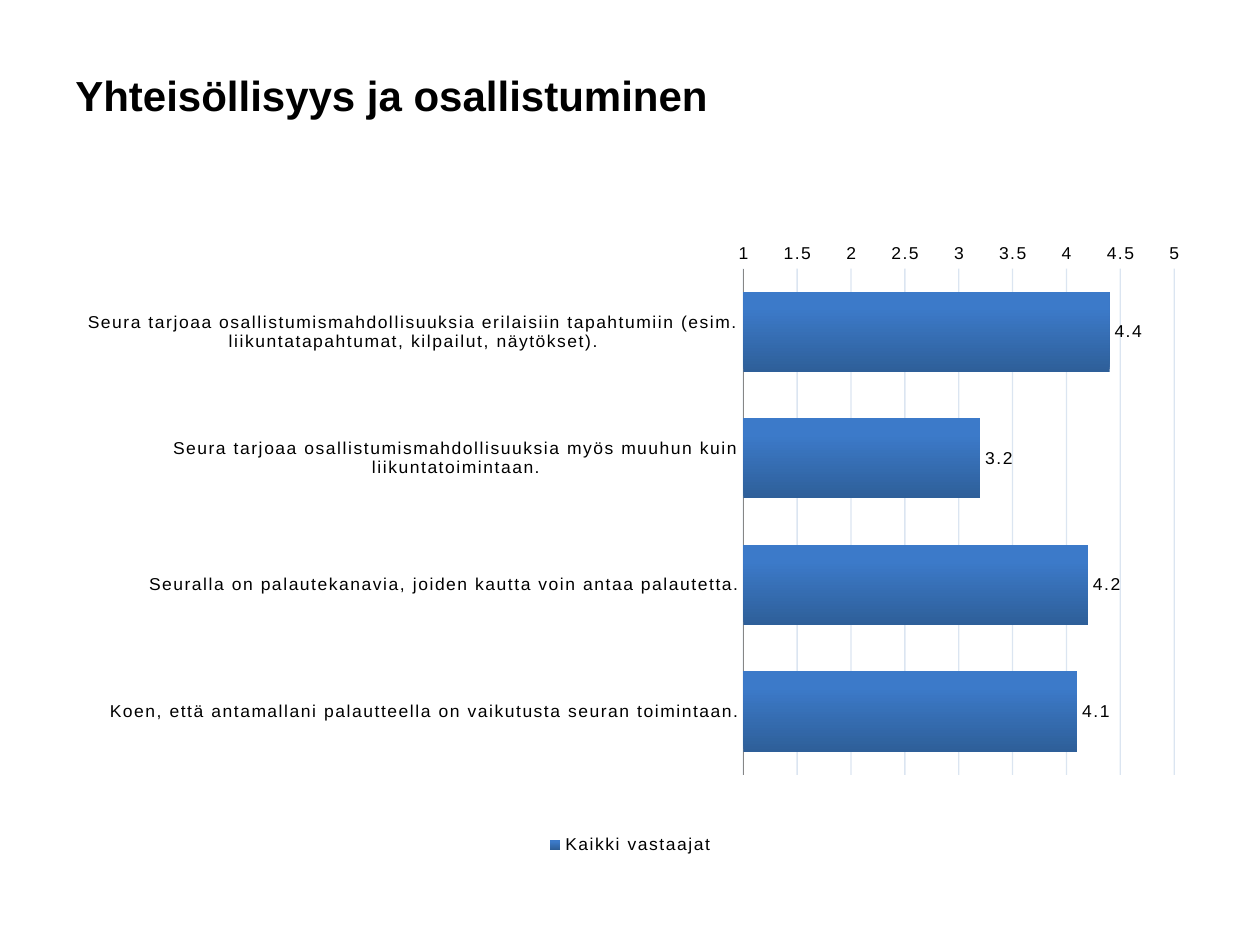
from lxml import etree
from pptx import Presentation
from pptx.chart.data import CategoryChartData
from pptx.dml.color import RGBColor
from pptx.enum.chart import (XL_AXIS_CROSSES, XL_CHART_TYPE, XL_LABEL_POSITION,
                             XL_LEGEND_POSITION, XL_TICK_MARK)
from pptx.enum.text import MSO_ANCHOR
from pptx.oxml import parse_xml
from pptx.oxml.ns import nsdecls, qn
from pptx.util import Inches, Pt

BAR_CHART = XL_CHART_TYPE.BAR_CLUSTERED
BOTTOM = XL_LEGEND_POSITION.BOTTOM
OUTSIDE_END = XL_LABEL_POSITION.OUTSIDE_END
NO_TICK = XL_TICK_MARK.NONE
AT_MAXIMUM = XL_AXIS_CROSSES.MAXIMUM
MIDDLE = MSO_ANCHOR.MIDDLE

BLACK = RGBColor(0x00, 0x00, 0x00)
GRID_BLUE = RGBColor(0x4F, 0x81, 0xBD)
BAR_DARK = RGBColor(0x2E, 0x5F, 0x99)
BAR_LIGHT = RGBColor(0x3C, 0x7A, 0xC9)
AXIS_GREY = RGBColor(0x86, 0x86, 0x86)
FONT = "Arial"

# Content
TITLE = "Yhteisöllisyys ja osallistuminen"
SERIES = "Kaikki vastaajat"
RATINGS = [
    ("Seura tarjoaa osallistumismahdollisuuksia erilaisiin tapahtumiin "
     "(esim. liikuntatapahtumat, kilpailut, näytökset).", 4.4),
    ("Seura tarjoaa osallistumismahdollisuuksia myös muuhun kuin "
     "liikuntatoimintaan.", 3.2),
    ("Seuralla on palautekanavia, joiden kautta voin antaa palautetta.", 4.2),
    ("Koen, että antamallani palautteella on vaikutusta seuran toimintaan.", 4.1),
]
# Plot area as fractions of the chart
PLOT_AREA = {"x": 0.6, "y": 0.02, "w": 0.38, "h": 0.84}


def style_font(font, size, bold=False, color=BLACK):
    font.name = FONT
    font.size = Pt(size)
    font.bold = bold
    font.color.rgb = color


def add_text(slide, text, left, top, width, height, size=18, bold=False,
             color=BLACK, anchor=MIDDLE):
    frame = slide.shapes.add_textbox(
        Inches(left), Inches(top), Inches(width), Inches(height)).text_frame
    frame.word_wrap = True
    frame.vertical_anchor = anchor
    run = frame.paragraphs[0].add_run()
    run.text = text
    style_font(run.font, size, bold, color)


def set_plot_layout(chart, fractions):
    plot_area = chart._chartSpace.chart.plotArea
    for old in plot_area.findall(qn("c:layout")):
        plot_area.remove(old)
    modes = '<c:xMode val="edge"/><c:yMode val="edge"/>'
    sizes = "".join(f'<c:{k} val="{v}"/>' for k, v in fractions.items())
    plot_area.insert(0, parse_xml(
        f'<c:layout {nsdecls("c")}><c:manualLayout><c:layoutTarget val="inner"/>'
        f'{modes}{sizes}</c:manualLayout></c:layout>'))


def add_rating_chart(slide):
    data = CategoryChartData(number_format="General")
    data.categories = [statement for statement, _ in RATINGS]
    data.add_series(SERIES, [rating for _, rating in RATINGS])
    chart = slide.shapes.add_chart(BAR_CHART, Inches(0.5), Inches(1.94),
                                   Inches(9), Inches(4.88), data).chart
    chart.has_title = False
    style_font(chart.font, 10)
    set_plot_layout(chart, PLOT_AREA)

    # Legend
    chart.has_legend = True
    chart.legend.position = BOTTOM
    chart.legend.include_in_layout = False
    style_font(chart.legend.font, 10)

    # Axes
    statements, scale = chart.category_axis, chart.value_axis
    for axis in (statements, scale):
        axis.major_tick_mark = axis.minor_tick_mark = NO_TICK
        style_font(axis.tick_labels.font, 10)
    statements.reverse_order = True
    statements.crosses = AT_MAXIMUM
    statements.format.line.color.rgb = AXIS_GREY
    statements.format.line.width = Pt(0.75)
    scale.minimum_scale, scale.maximum_scale, scale.major_unit = 1, 5, 0.5
    scale.format.line.fill.background()
    grid = scale.major_gridlines.format.line
    grid.color.rgb = GRID_BLUE
    grid.width = Pt(0.75)
    grid_color = scale._element.find(
        f'{qn("c:majorGridlines")}//{qn("a:srgbClr")}')
    etree.SubElement(grid_color, qn("a:alpha"), val="20000")

    # Bars and their values
    plot = chart.plots[0]
    plot.gap_width = 58
    plot.vary_by_categories = False
    bars = plot.series[0]
    bars.invert_if_negative = False
    fill = bars.format.fill
    fill.gradient()
    fill.gradient_angle = 90
    for stop, color, position in zip(fill.gradient_stops,
                                     (BAR_DARK, BAR_LIGHT), (0, 0.8)):
        stop.color.rgb = color
        stop.position = position
    labels = bars.data_labels
    labels.show_value = True
    labels.position = OUTSIDE_END
    style_font(labels.font, 10)

    # Letter spacing of one point throughout the chart
    for properties in chart._chartSpace.iter(qn("a:defRPr")):
        properties.set("spc", "100")


def main():
    prs = Presentation()
    prs.slide_width, prs.slide_height = Inches(10), Inches(7.5)
    slide = prs.slides.add_slide(prs.slide_layouts[6])
    add_text(slide, TITLE, 0.5, 0.36, 9, 0.79, size=24, bold=True)
    add_rating_chart(slide)
    prs.save("out.pptx")


if __name__ == "__main__":
    main()
